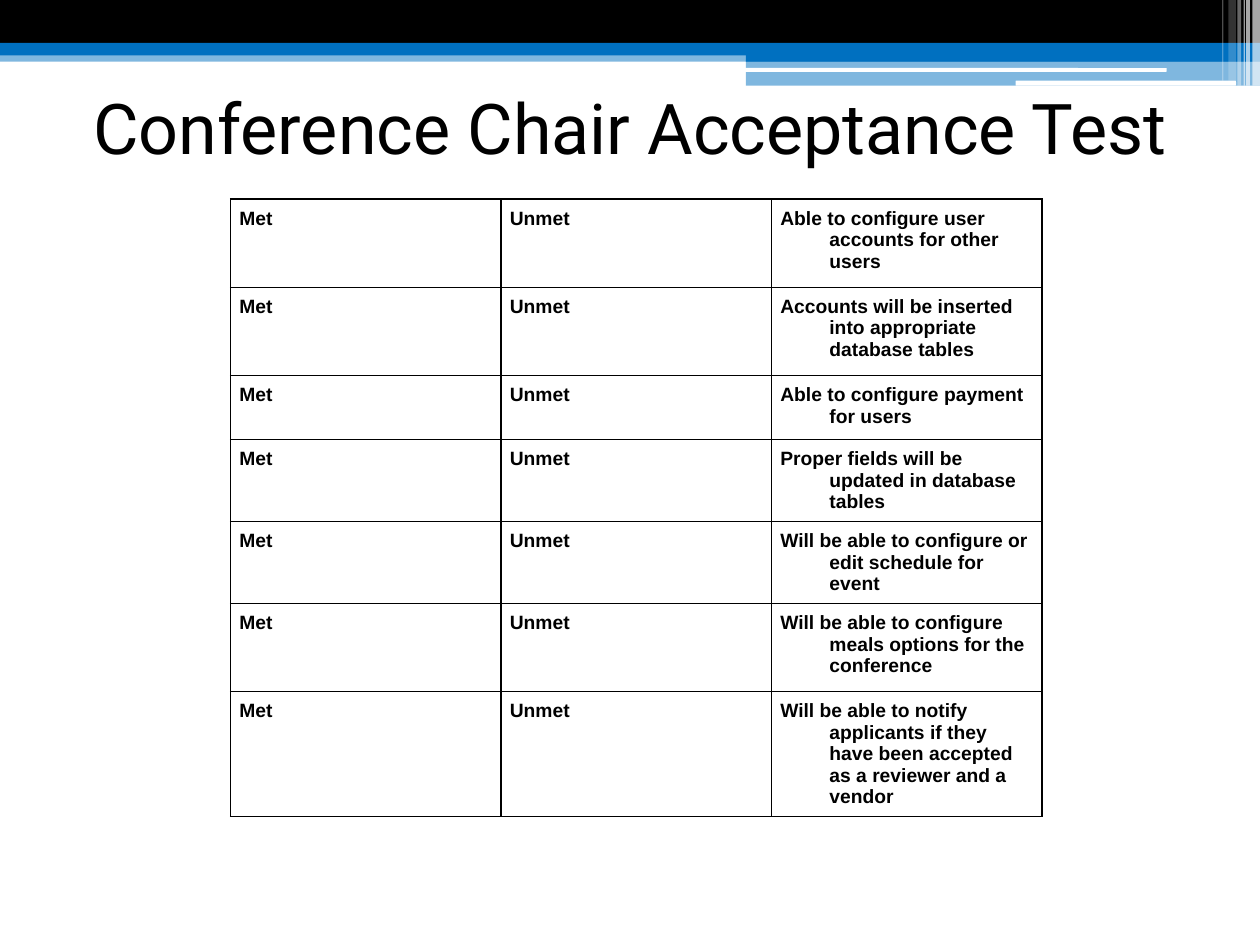
"""Build the conference chair acceptance test slide."""
from lxml import etree
from pptx import Presentation
from pptx.dml.color import RGBColor
from pptx.enum import shapes, text
from pptx.oxml import ns
from pptx.util import Inches, Pt

HUES = {"black": "000000", "blue": "0070C0", "white": "FFFFFF"}
TITLE = "Conference Chair Acceptance Test"
TESTS = [
    ("Able to configure user accounts for other users", 0.7),
    ("Accounts will be inserted into appropriate database tables", 0.7),
    ("Able to configure payment for users", 0.51),
    ("Proper fields will be updated in database tables", 0.65),
    ("Will be able to configure or edit schedule for event", 0.65),
    ("Will be able to configure meals options for the conference", 0.7),
    ("Will be able to notify applicants if they have been accepted as a reviewer and a vendor", 0.99),
]
BARS = [
    (0, 0.4, 10, 0.09, "blue", 50),
    (0, 0, 10, 0.34, "black", 100),
    (0, 0.34, 10, 0.1, "blue", 100),
    (5.92, 0.39, 4.08, 0.1, "blue", 100),
    (5.92, 0.48, 4.08, 0.2, "blue", 50),
]
PILLS = [(5.91, 0.54, 3.35, 0.03, "white", 100), (8.06, 0.64, 1.75, 0.04, "white", 100)]
STRIPES = [
    (9.94, 0.06, 0.68, 65), (9.89, 0.03, 0.68, 65), (9.87, 0.01, 0.68, 60),
    (9.82, 0.03, 0.68, 40), (9.75, 0.06, 0.64, 20), (9.7, 0.01, 0.64, 30),
]
TABLE = (1.83, 1.58, 6.44, 4.9)
PAD, HANG = Inches(0.07), Inches(0.39)
HEAD = {"size": Pt(40), "name": "Roboto", "bold": False}
BODY = {"size": Pt(11), "name": "Arial", "bold": True}


def put(item, values):
    for key, value in values.items():
        setattr(item, key, value)


def style(para, look):
    put(para.font, look)
    para.font.color.rgb = RGBColor.from_string(HUES["black"])


def bar(slide, kind, x, y, w, h, hue, alpha):
    shape = slide.shapes.add_shape(kind, *map(Inches, (x, y, w, h)))
    shape.shadow.inherit = False
    shape.line.fill.background()
    shape.fill.solid()
    shape.fill.fore_color.rgb = RGBColor.from_string(HUES[hue])
    if alpha < 100:
        clr = shape.fill._xPr.find(".//" + ns.qn("a:srgbClr"))
        etree.SubElement(clr, ns.qn("a:alpha"), val=str(alpha * 1000))


def border(cell):
    props = cell._tc.get_or_add_tcPr()
    for side in "LRTB":
        line = etree.SubElement(props, ns.qn("a:ln" + side), w=str(Pt(1)))
        fill = etree.SubElement(line, ns.qn("a:solidFill"))
        etree.SubElement(fill, ns.qn("a:srgbClr"), val=HUES["black"])


def write(cell, words):
    border(cell)
    cell.fill.background()
    put(cell, {"margin_" + side: PAD for side in ("left", "right", "top", "bottom")})
    cell.text = words
    para = cell.text_frame.paragraphs[0]
    style(para, BODY)
    props = para._p.get_or_add_pPr()
    props.set("marL", str(HANG))
    props.set("indent", str(-HANG))


def grid(slide):
    table = slide.shapes.add_table(len(TESTS), 3, *map(Inches, TABLE)).table
    put(table, {"first_row": False, "horz_banding": False})
    for row, (test, height) in zip(table.rows, TESTS):
        row.height = Inches(height)
        for cell, words in zip(row.cells, ("Met", "Unmet", test)):
            write(cell, words)


def head(slide):
    title = slide.shapes.title
    put(title, dict(zip(("left", "top", "width", "height"), map(Inches, (0, 0.42, 10, 1.17)))))
    title.text = TITLE
    put(title.text_frame, {"vertical_anchor": text.MSO_ANCHOR.MIDDLE,
                           "auto_size": text.MSO_AUTO_SIZE.NONE, "word_wrap": True})
    para = title.text_frame.paragraphs[0]
    para.alignment = text.PP_ALIGN.CENTER
    style(para, HEAD)
    slide.shapes._spTree.append(title._element)


def main():
    deck = Presentation()
    put(deck, {"slide_width": Inches(10), "slide_height": Inches(7.5)})
    slide = deck.slides.add_slide(deck.slide_layouts[5])
    kinds = shapes.MSO_SHAPE
    strips = [(x, 0, w, h, "white", alpha) for x, w, h, alpha in STRIPES]
    for kind, group in ((kinds.RECTANGLE, BARS), (kinds.ROUNDED_RECTANGLE, PILLS),
                        (kinds.RECTANGLE, strips)):
        for part in group:
            bar(slide, kind, *part)
    head(slide)
    grid(slide)
    deck.save("out.pptx")


if __name__ == "__main__":
    main()
